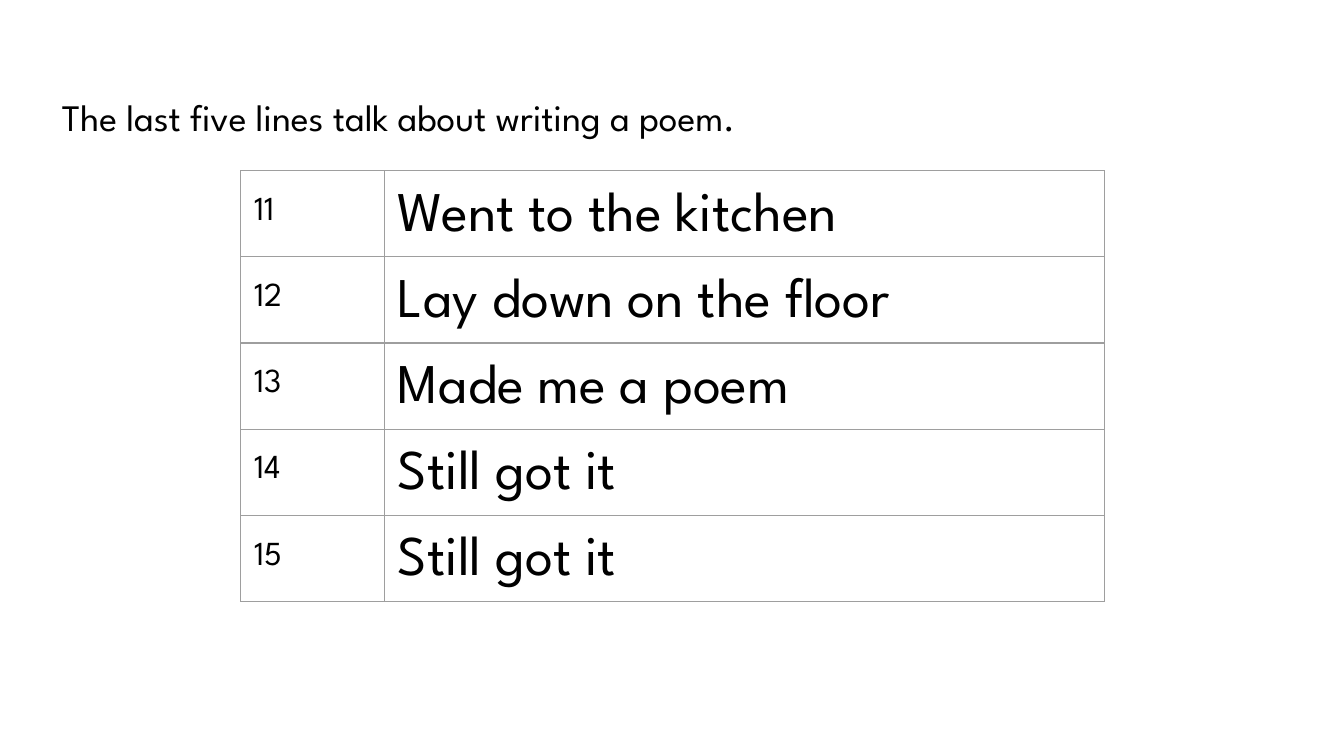
"""Builds a slide that shows the last five lines of a poem in a numbered table."""
from lxml import etree
from pptx import Presentation
from pptx.dml.color import RGBColor
from pptx.enum.text import MSO_ANCHOR, MSO_AUTO_SIZE, PP_ALIGN
from pptx.oxml.ns import qn
from pptx.util import Inches, Pt

LEFT, TOP, MIDDLE = PP_ALIGN.LEFT, MSO_ANCHOR.TOP, MSO_ANCHOR.MIDDLE
NO_FIT = MSO_AUTO_SIZE.NONE
COLORS = {"text": "000000", "border": "9E9E9E"}
FONT = "League Spartan"
COLS, ROW = (1.07, 5.36), 0.64
FIRST_LINE = 11
LINES = ["Went to the kitchen", "Lay down on the floor", "Made me a poem",
         "Still got it", "Still got it"]


def write(box, text, size=18, anchor=TOP, top=0.1, bottom=0.1):
    box.margin_left = box.margin_right = Inches(0.1)
    box.margin_top, box.margin_bottom = Inches(top), Inches(bottom)
    box.vertical_anchor = anchor
    tf = getattr(box, "text_frame", box)
    p = tf.paragraphs[0]
    p.alignment = LEFT
    p.line_spacing = 1.15
    r = p.add_run()
    r.text = text
    r.font.name = FONT
    r.font.size = Pt(size)
    r.font.color.rgb = RGBColor.from_string(COLORS["text"])


def add_borders(cell):
    tc_pr = cell._tc.get_or_add_tcPr()
    for i, side in enumerate(("a:lnL", "a:lnR", "a:lnT", "a:lnB")):
        ln = etree.Element(qn(side), w=str(Pt(0.75)))
        fill = etree.SubElement(ln, qn("a:solidFill"))
        etree.SubElement(fill, qn("a:srgbClr"), val=COLORS["border"])
        tc_pr.insert(i, ln)


prs = Presentation()
prs.slide_width = Inches(10)
prs.slide_height = prs.slide_width * 9 // 16
s = prs.slides.add_slide(prs.slide_layouts[5])

title = s.shapes.title
title.left, title.top = Inches(0.36), Inches(0.55)
title.width, title.height = Inches(9.28), Inches(0.63)
tf = title.text_frame
tf.word_wrap = True
tf.auto_size = NO_FIT
write(tf, "The last five lines talk about writing a poem.", size=20,
      anchor=MIDDLE, bottom=0.14)

frame = s.shapes.add_table(len(LINES), len(COLS), Inches(1.79), Inches(1.27),
                           Inches(sum(COLS)), Inches(ROW * len(LINES)))
table = frame.table
table.first_row = table.horz_banding = False
for col, width in zip(table.columns, COLS):
    col.width = Inches(width)
for i, (row, line) in enumerate(zip(table.rows, LINES)):
    row.height = Inches(ROW)
    number, verse = row.cells
    write(number, str(FIRST_LINE + i), top=0.16)
    write(verse, line, size=30)
    for cell in row.cells:
        cell.fill.background()
        add_borders(cell)

prs.save("out.pptx")
